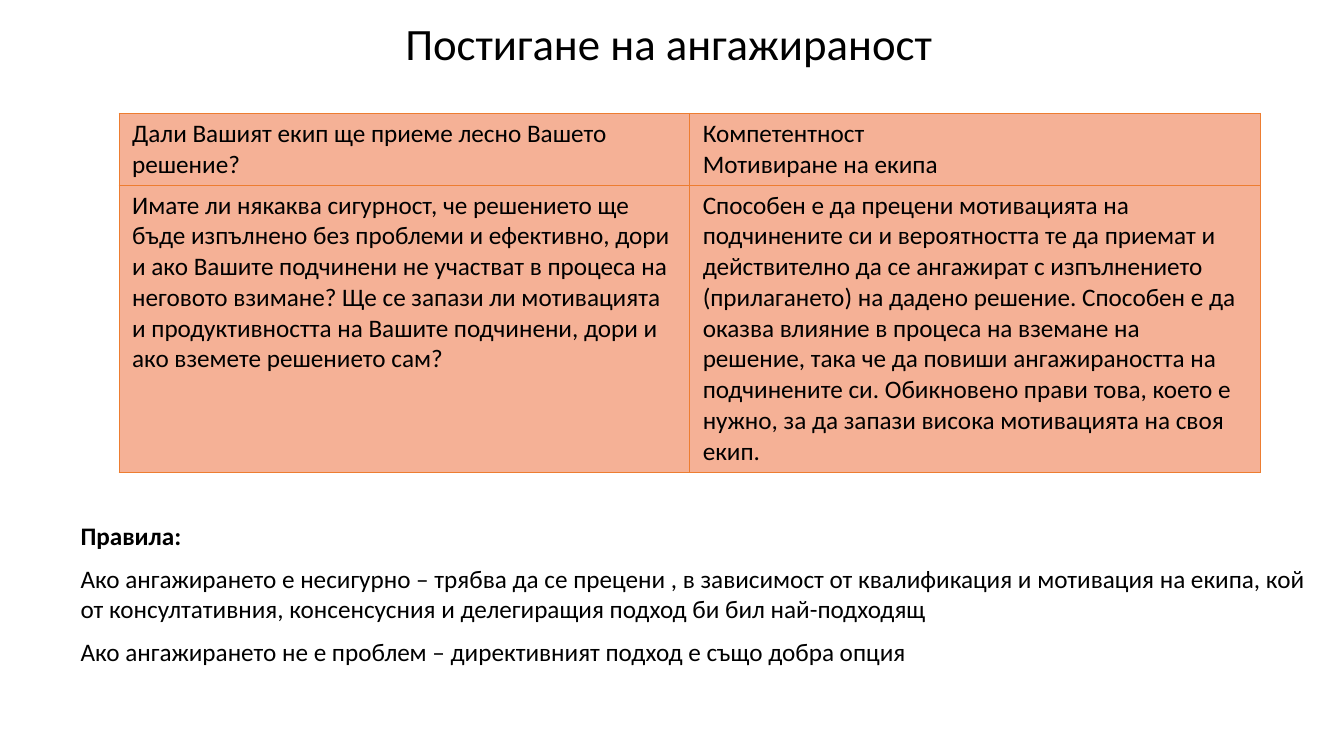
from lxml.etree import SubElement
from pptx import Presentation
from pptx.dml.color import RGBColor
from pptx.enum.text import MSO_ANCHOR, MSO_AUTO_SIZE, PP_ALIGN
from pptx.oxml.ns import qn
from pptx.util import Cm, Pt

FONT = "Calibri"
TEXT = "000000"
FILL = "F5B196"
BORDER = "ED7D31"

TITLE = "Постигане на ангажираност"
ROWS = [
    (
        ["Дали Вашият екип ще приеме лесно Вашето решение?"],
        ["Компетентност", "Мотивиране на екипа"],
    ),
    (
        ["Имате ли някаква сигурност, че решението ще бъде изпълнено без проблеми "
         "и ефективно, дори и ако Вашите подчинени не участват в процеса на неговото "
         "взимане? Ще се запази ли мотивацията и продуктивността на Вашите подчинени, "
         "дори и ако вземете решението сам?"],
        ["Способен е да прецени мотивацията на подчинените си и вероятността те да "
         "приемат и действително да се ангажират с изпълнението (прилагането) на "
         "дадено решение. Способен е да оказва влияние в процеса на вземане на решение, "
         "така че да повиши ангажираността на подчинените си. Обикновено прави това, "
         "което е нужно, за да запази висока мотивацията на своя екип."],
    ),
]
ROW_HEIGHTS = [1.79, 7.23]
RULES_HEADING = "Правила:"
RULES = [
    "Ако ангажирането е несигурно – трябва да се прецени , в зависимост от "
    "квалификация и мотивация на екипа, кой от консултативния, консенсусния и "
    "делегиращия подход би бил най-подходящ",
    "Ако ангажирането не е проблем – директивният подход е също добра опция",
]


def rgb(color):
    return RGBColor.from_string(color)


def add_run(p, text, size=18, bold=False):
    r = p.add_run()
    r.text = text
    r.font.name = FONT
    r.font.size = Pt(size)
    r.font.bold = bold
    r.font.color.rgb = rgb(TEXT)


def add_paragraphs(tf, texts):
    for i, text in enumerate(texts):
        p = tf.paragraphs[0] if i == 0 else tf.add_paragraph()
        add_run(p, text)


def set_borders(cell):
    tcPr = cell._tc.get_or_add_tcPr()
    for i, side in enumerate(("lnL", "lnR", "lnT", "lnB")):
        ln = SubElement(tcPr, qn(f"a:{side}"), w=str(Pt(0.5)))
        fill = SubElement(ln, qn("a:solidFill"))
        SubElement(fill, qn("a:srgbClr"), val=BORDER)
        tcPr.insert(i, ln)


def add_title(s):
    sp = s.shapes.title
    sp.left, sp.top, sp.width, sp.height = Cm(9.96), Cm(0), Cm(17.17), Cm(2.31)
    tf = sp.text_frame
    tf.auto_size = MSO_AUTO_SIZE.NONE
    tf.vertical_anchor = MSO_ANCHOR.MIDDLE
    p = tf.paragraphs[0]
    p.alignment = PP_ALIGN.LEFT
    p.line_spacing = 0.9
    add_run(p, TITLE, 32)


def add_commitment_table(s):
    table = s.shapes.add_table(len(ROWS), 2, Cm(3), Cm(2.85), Cm(28.76),
                               Cm(sum(ROW_HEIGHTS))).table
    for row, height, texts in zip(table.rows, ROW_HEIGHTS, ROWS):
        row.height = Cm(height)
        for cell, paragraphs in zip(row.cells, texts):
            cell.fill.solid()
            cell.fill.fore_color.rgb = rgb(FILL)
            cell.margin_left = cell.margin_right = Cm(0.33)
            cell.margin_top = cell.margin_bottom = Cm(0.13)
            set_borders(cell)
            add_paragraphs(cell.text_frame, paragraphs)


def add_rules(s):
    sp = s.shapes.add_textbox(Cm(1.78), Cm(12.98), Cm(31.47), Cm(4.11))
    tf = sp.text_frame
    tf.word_wrap = True
    tf.auto_size = MSO_AUTO_SIZE.SHAPE_TO_FIT_TEXT
    add_run(tf.paragraphs[0], RULES_HEADING, bold=True)
    for rule in RULES:
        add_run(tf.add_paragraph(), rule)
    for p in tf.paragraphs:
        p.space_before = Pt(9)


def main():
    prs = Presentation()
    prs.slide_width, prs.slide_height = Cm(33.87), Cm(19.05)
    s = prs.slides.add_slide(prs.slide_layouts[5])
    add_title(s)
    add_commitment_table(s)
    add_rules(s)
    prs.save("out.pptx")


if __name__ == "__main__":
    main()
